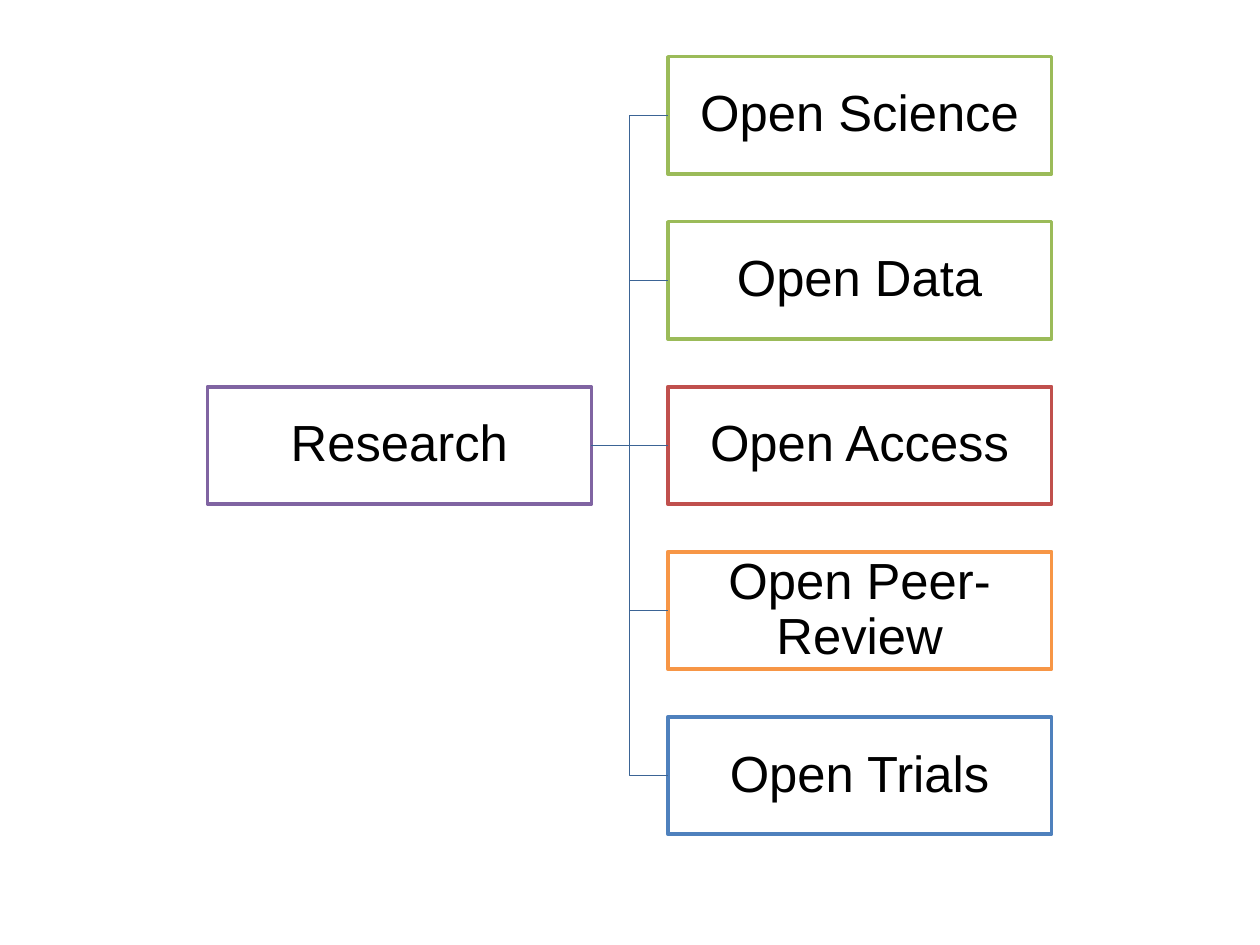
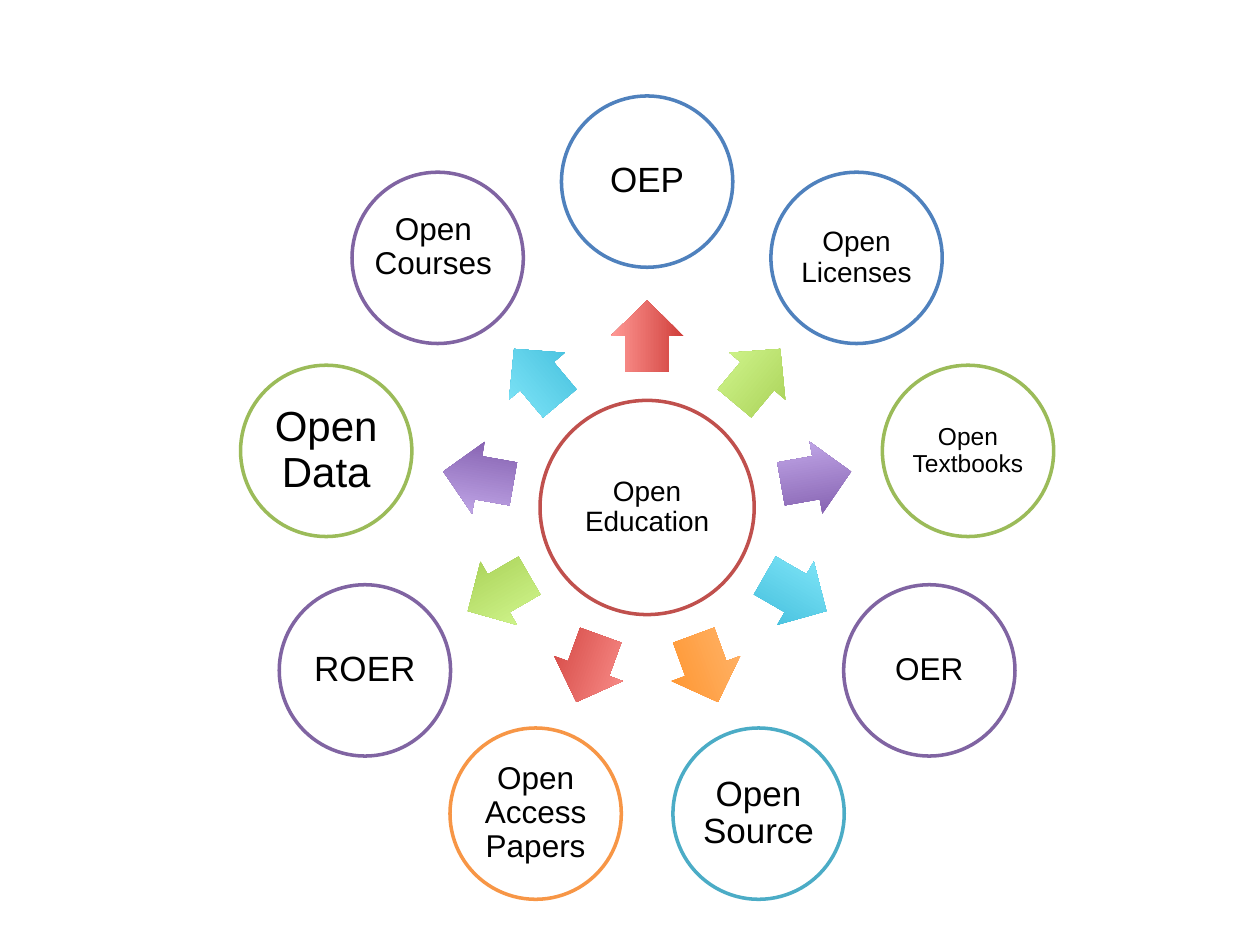
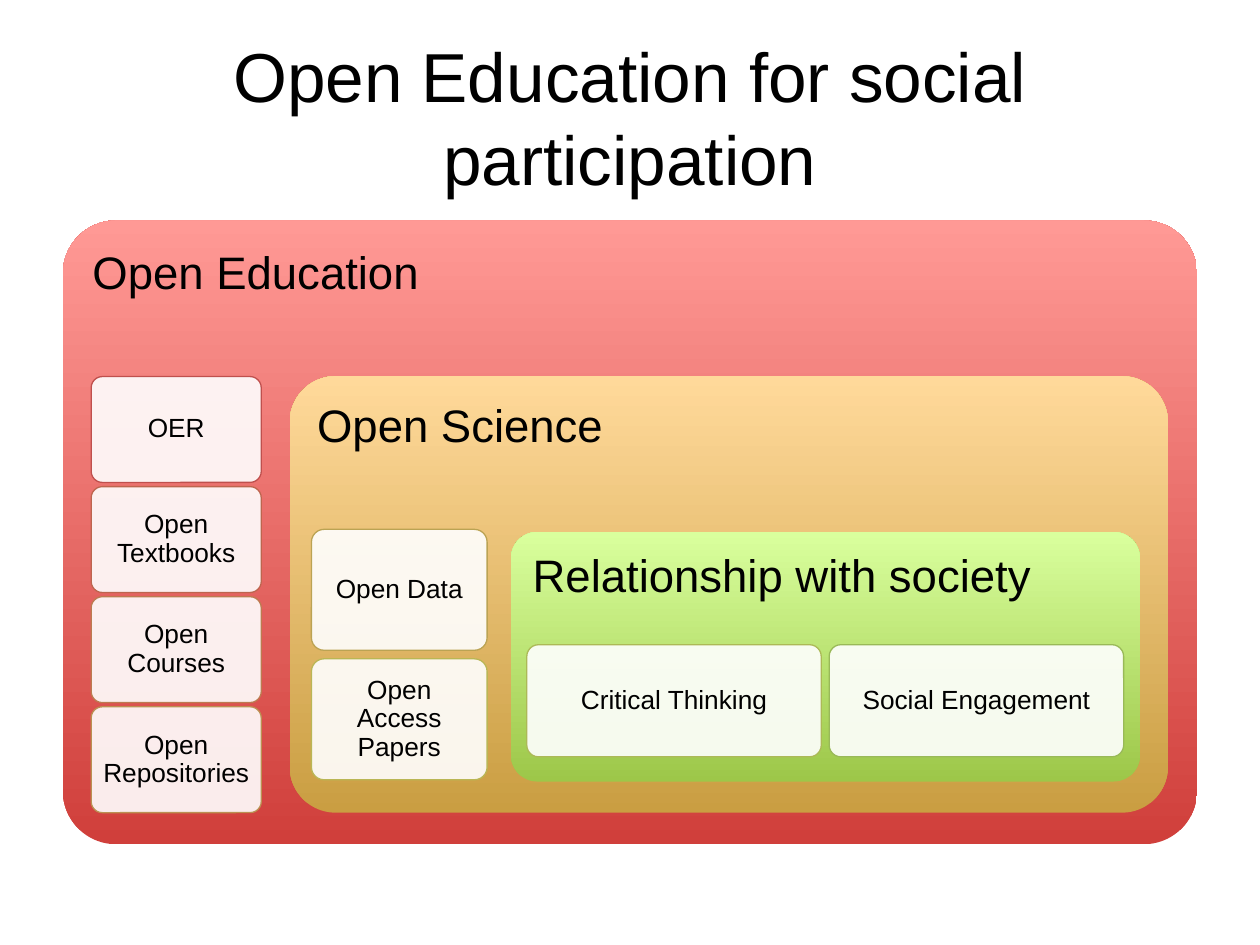
import math

from lxml import etree
from pptx import Presentation
from pptx import util as u
from pptx.dml import color as dml
from pptx.enum import shapes, text
from pptx.oxml import ns

KIND = shapes.MSO_SHAPE
LINK = shapes.MSO_CONNECTOR
MIDDLE = text.MSO_ANCHOR.MIDDLE
TOP = text.MSO_ANCHOR.TOP
CENTER = text.PP_ALIGN.CENTER
LEFT = text.PP_ALIGN.LEFT

HUES = {
    "ink": "000000", "white": "FFFFFF", "link": "3B6495",
    "red": "C0504D", "green": "9BBB59", "violet": "8064A2",
    "orange": "F79646", "blue": "4F81BD", "teal": "4BACC6",
}
BLENDS = {
    "red": ("D03F3B", "FF9995"), "green": ("A0C94A", "DBFF9C"),
    "violet": ("7F5AAB", "C7AEED"), "teal": ("36B7D7", "90EFFF"),
    "orange": ("FF9228", "FFB771"), "gold": ("CA9E42", "FFD99A"),
    "lime": ("9DC749", "D9FF9D"),
}


def rgb(name):
    return dml.RGBColor.from_string(HUES.get(name, name))


class Pen:
    """Holds the deck style and draws on the current slide."""

    def __init__(self):
        self.deck = Presentation()
        self.deck.slide_width = u.Pt(720)
        self.deck.slide_height = u.Pt(540)
        self.slide = None

    def page(self, title=None):
        layout = self.deck.slide_layouts[5 if title else 6]
        self.slide = self.deck.slides.add_slide(layout)
        if title:
            head = self.slide.shapes.title
            place = {"left": 36, "top": 21.6, "width": 648, "height": 90}
            for key, val in place.items():
                setattr(head, key, u.Pt(val))
            self.letter(head, title, 39.6, pad=(7.2, 3.6), space=None)

    def letter(self, shape, words, size, pad=(1.5, 1.5), align=CENTER,
               anchor=MIDDLE, space=0.9):
        frame = shape.text_frame
        side, edge = map(u.Pt, pad)
        frame.text = words
        para = frame.paragraphs[0]
        font = para.runs[0].font
        formats = (
            (frame, {"auto_size": text.MSO_AUTO_SIZE.NONE, "word_wrap": True,
                     "vertical_anchor": anchor,
                     "margin_left": side, "margin_right": side,
                     "margin_top": edge, "margin_bottom": edge}),
            (para, {"alignment": align, "line_spacing": space}),
            (font, {"name": "Arial", "size": u.Pt(size)}),
        )
        for item, values in formats:
            for key, val in values.items():
                setattr(item, key, val)
        font.color.rgb = rgb("ink")

    def label(self, box, words, size):
        area = self.slide.shapes.add_textbox(*map(u.Pt, box))
        self.letter(area, words, size)

    def shape(self, kind, box, line=None, width=2.0, adjust=()):
        item = self.slide.shapes.add_shape(kind, *map(u.Pt, box))
        item.shadow.inherit = False
        for i, val in enumerate(adjust):
            item.adjustments[i] = val
        item.fill.solid()
        item.fill.fore_color.rgb = rgb("white")
        if line:
            item.line.color.rgb = rgb(line)
            item.line.width = u.Pt(width)
        else:
            item.line.fill.background()
        return item

    def blend(self, kind, box, name, adjust):
        item = self.shape(kind, box, adjust=adjust)
        item.fill.gradient()
        item.fill.gradient_angle = 90
        for stop, hue in zip(item.fill.gradient_stops, BLENDS[name]):
            stop.color.rgb = rgb(hue)
        return item

    def card(self, box, words, line):
        item = self.shape(KIND.ROUNDED_RECTANGLE, box, line, 0.75, (0.105,))
        tint = item.element.spPr.find(".//" + ns.qn("a:srgbClr"))
        etree.SubElement(tint, ns.qn("a:alpha"), val="90000")
        self.letter(item, words, 15, (4.3, 4.3))

    def join(self, start, end):
        kind = LINK.STRAIGHT if start.top == end.top else LINK.ELBOW
        line = self.slide.shapes.add_connector(kind, 0, 0, 0, 0)
        line.begin_connect(start, 3)
        line.end_connect(end, 1)
        line.line.color.rgb = rgb("link")
        line.line.width = u.Pt(0.75)
        etree.SubElement(line.element.spPr, ns.qn("a:effectLst"))


def tree(pen):
    pen.page()
    top, step, wide, high = 32.4, 94.32, 219.4, 67

    def node(left, row, words, line):
        box = (left, top + row * step, wide, high)
        item = pen.shape(KIND.RECTANGLE, box, line)
        pen.letter(item, words, 29)
        return item

    root = node(118.6, 2, "Research", "violet")
    topics = (("Open Science", "green"), ("Open Data", "green"),
              ("Open Access", "red"), ("Open Peer-Review", "orange"),
              ("Open Trials", "blue"))
    for row, (words, line) in enumerate(topics):
        pen.join(root, node(381.6, row, words, line))


def wheel(pen):
    pen.page()
    mid_x, mid_y, ring, orbit = 369.8, 290, 186.2, 98

    def around(angle, reach, wide, high):
        x = mid_x + reach * math.cos(math.radians(angle))
        y = mid_y + reach * math.sin(math.radians(angle))
        return x - wide / 2, y - high / 2, wide, high

    hub = pen.shape(KIND.OVAL, around(0, 0, 122.4, 122.4), "red")
    pen.letter(hub, "Open Education", 16)
    topics = (
        ("OEP", 20, "blue", "red"), ("Open Licenses", 16, "blue", "green"),
        ("Open Textbooks", 14, "green", "violet"),
        ("OER", 18, "violet", "teal"), ("Open Source", 20, "teal", "orange"),
        ("Open Access Papers", 18, "orange", "red"),
        ("ROER", 20, "violet", "green"), ("Open Data", 24, "green", "violet"),
        (None, 18, "violet", "teal"),
    )
    for i, (words, size, line, name) in enumerate(topics):
        angle = 270 + i * 360 / len(topics)
        arrow = pen.blend(KIND.RIGHT_ARROW, around(angle, orbit, 40.6, 41.6),
                          name, (0.6, 0.5))
        arrow.rotation = angle % 360
        disc = pen.shape(KIND.OVAL, around(angle, ring, 97.9, 97.9), line)
        if words:
            pen.letter(disc, words, size)
    pen.label((209.5, 106.6, 76.3, 69.1), "Open Courses", 18)


def nest(pen):
    pen.page("Open Education for social participation")
    panels = (
        ("Open Education", (36, 126, 648, 356.4), "red", 0.085,
         (52.1, 215.2, 97.2, 60.5), (0, 62.9),
         (("OER", "BF504D"), ("Open Textbooks", "BD654E"),
          ("Open Courses", "BC7B50"), ("Open Repositories", "BB9052"))),
        ("Open Science", (165.6, 215, 501.8, 249.4), "gold", 0.105,
         (178, 302.5, 100.4, 69.1), (0, 74),
         (("Open Data", "BBA353"), ("Open Access Papers", "BAB655"))),
        ("Relationship with society", (292, 304, 359.4, 142.6), "lime", 0.105,
         (301, 368.4, 168.3, 64.1), (172.8, 0),
         (("Critical Thinking", "ACB957"), ("Social Engagement", "99B958"))),
    )
    for words, box, name, curve, first, step, cards in panels:
        panel = pen.blend(KIND.ROUNDED_RECTANGLE, box, name, (curve,))
        pen.letter(panel, words, 26, (8, 8), LEFT, TOP)
        left, top, wide, high = first
        for i, (topic, line) in enumerate(cards):
            spot = (left + i * step[0], top + i * step[1], wide, high)
            pen.card(spot, topic, line)


def main():
    pen = Pen()
    for draw in (tree, wheel, nest):
        draw(pen)
    pen.deck.save("out.pptx")


if __name__ == "__main__":
    main()
